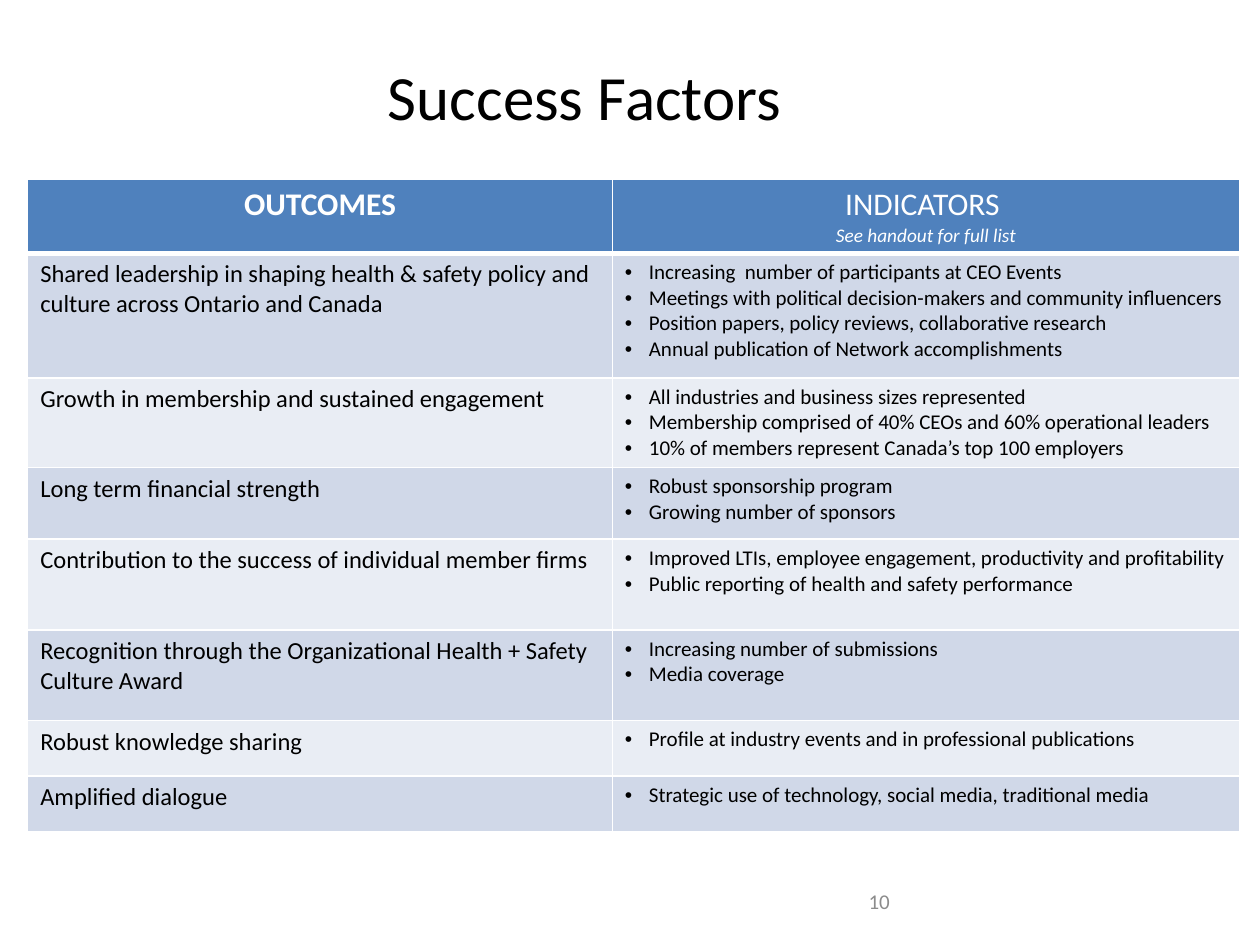
"""Build the Success Factors slide with its outcomes and indicators table."""
from dataclasses import dataclass

from lxml import etree
from pptx import Presentation
from pptx import util as u
from pptx.dml.color import RGBColor
from pptx.enum import text
from pptx.oxml import ns


@dataclass(frozen=True)
class Theme:
    font: str = "Calibri"
    ink: str = "000000"
    paper: str = "FFFFFF"
    muted: str = "8C8C8C"
    header: str = "4F81BD"
    bands: tuple[str, str] = ("D0D8E8", "E9EDF4")
    title_size: float = 36
    heading_size: float = 18
    note_size: float = 11
    outcome_size: float = 14
    indicator_size: float = 12
    rule: float = 1
    header_rule: float = 3
    bullet_indent: float = 0.19


@dataclass(frozen=True)
class Factor:
    outcome: str
    indicators: tuple[str, ...]
    height: float


THEME = Theme()
HEADER_HEIGHT = 0.59
COLUMN_WIDTHS = (4.64, 4.98)
FACTORS = (
    Factor("Shared leadership in shaping health & safety policy and culture across Ontario and Canada",
           ("Increasing  number of participants at CEO Events",
            "Meetings with political decision-makers and community influencers",
            "Position papers, policy reviews, collaborative research",
            "Annual publication of Network accomplishments"), 0.99),
    Factor("Growth in membership and sustained engagement",
           ("All industries and business sizes represented",
            "Membership comprised of 40% CEOs and 60% operational leaders",
            "10% of members represent Canada’s top 100 employers"), 0.71),
    Factor("Long term financial strength",
           ("Robust sponsorship program", "Growing number of sponsors"), 0.57),
    Factor("Contribution to the success of individual member firms",
           ("Improved LTIs, employee engagement, productivity and profitability",
            "Public reporting of health and safety performance"), 0.72),
    Factor("Recognition through the Organizational Health + Safety Culture Award",
           ("Increasing number of submissions", "Media coverage"), 0.72),
    Factor("Robust knowledge sharing",
           ("Profile at industry events and in professional publications",), 0.44),
    Factor("Amplified dialogue",
           ("Strategic use of technology, social media, traditional media",), 0.44),
)


def add_run(paragraph, words: str, size: float, color: str = THEME.ink,
            bold: bool = False, italic: bool = False) -> None:
    """Append one formatted run to a paragraph."""
    run = paragraph.add_run()
    run.text = words
    run.font.name = THEME.font
    run.font.size = u.Pt(size)
    run.font.bold = bold
    run.font.italic = italic
    run.font.color.rgb = RGBColor.from_string(color)


def add_label(slide, left: float, top: float, width: float, height: float):
    """Add a middle-anchored text box and return its first paragraph."""
    frame = slide.shapes.add_textbox(*map(u.Inches, (left, top, width, height))).text_frame
    frame.word_wrap = True
    frame.vertical_anchor = text.MSO_ANCHOR.MIDDLE
    return frame.paragraphs[0]


def style_cell(cell, fill: str, top_rule: float, bottom_rule: float) -> None:
    """Give a cell its borders and fill."""
    properties = cell._tc.get_or_add_tcPr()
    widths = {"a:lnL": THEME.rule, "a:lnR": THEME.rule, "a:lnT": top_rule, "a:lnB": bottom_rule}
    for side, width in widths.items():
        line = etree.SubElement(properties, ns.qn(side), w=str(u.Pt(width)))
        solid = etree.SubElement(line, ns.qn("a:solidFill"))
        etree.SubElement(solid, ns.qn("a:srgbClr"), val=THEME.paper)
    cell.fill.solid()
    cell.fill.fore_color.rgb = RGBColor.from_string(fill)


def add_bullet(paragraph) -> None:
    """Set a hanging bullet on a paragraph."""
    properties = paragraph._p.get_or_add_pPr()
    indent = u.Inches(THEME.bullet_indent)
    properties.set("marL", str(indent))
    properties.set("indent", str(-indent))
    etree.SubElement(properties, ns.qn("a:buFont"), typeface="Arial")
    etree.SubElement(properties, ns.qn("a:buChar"), char="•")


def fill_header(outcomes, indicators) -> None:
    """Write the two column headings."""
    for cell in (outcomes, indicators):
        style_cell(cell, THEME.header, THEME.rule, THEME.header_rule)
    outcomes_heading = outcomes.text_frame.paragraphs[0]
    indicators_heading = indicators.text_frame.paragraphs[0]
    handout_note = indicators.text_frame.add_paragraph()
    for paragraph in (outcomes_heading, indicators_heading, handout_note):
        paragraph.alignment = text.PP_ALIGN.CENTER
    add_run(outcomes_heading, "OUTCOMES", THEME.heading_size, THEME.paper, bold=True)
    add_run(indicators_heading, "INDICATORS ", THEME.heading_size, THEME.paper)
    add_run(handout_note, "See handout for full list", THEME.note_size, THEME.paper, italic=True)


def fill_factor(outcome, indicators, factor: Factor, index: int) -> None:
    """Write one outcome with its bulleted indicators."""
    top_rule = THEME.rule if index else THEME.header_rule
    for cell in (outcome, indicators):
        style_cell(cell, THEME.bands[index % 2], top_rule, THEME.rule)
    add_run(outcome.text_frame.paragraphs[0], factor.outcome, THEME.outcome_size)
    frame = indicators.text_frame
    for position, indicator in enumerate(factor.indicators):
        paragraph = frame.add_paragraph() if position else frame.paragraphs[0]
        add_bullet(paragraph)
        add_run(paragraph, indicator, THEME.indicator_size)


def add_factors(slide) -> None:
    """Add the table of outcomes and indicators."""
    heights = (HEADER_HEIGHT, *(factor.height for factor in FACTORS))
    factors_table = slide.shapes.add_table(
        len(heights), len(COLUMN_WIDTHS), u.Inches(0.22), u.Inches(1.42),
        u.Inches(sum(COLUMN_WIDTHS)), u.Inches(sum(heights))).table
    for column, width in zip(factors_table.columns, COLUMN_WIDTHS):
        column.width = u.Inches(width)
    for row, height in zip(factors_table.rows, heights):
        row.height = u.Inches(height)
    fill_header(*factors_table.rows[0].cells)
    for index, factor in enumerate(FACTORS):
        fill_factor(*factors_table.rows[index + 1].cells, factor, index)


def main() -> None:
    """Create and save the presentation."""
    deck = Presentation()
    deck.slide_width, deck.slide_height = u.Inches(10), u.Inches(7.5)
    slide = deck.slides.add_slide(deck.slide_layouts[6])
    title = add_label(slide, 2.98, 0.3, 6.52, 1.01)
    title.line_spacing = u.Pt(36)
    add_run(title, "Success Factors", THEME.title_size)
    add_factors(slide)
    page_number = add_label(slide, 6.37, 6.95, 0.79, 0.4)
    page_number.alignment = text.PP_ALIGN.RIGHT
    add_run(page_number, "10", THEME.indicator_size, THEME.muted)
    deck.save("out.pptx")


if __name__ == "__main__":
    main()
